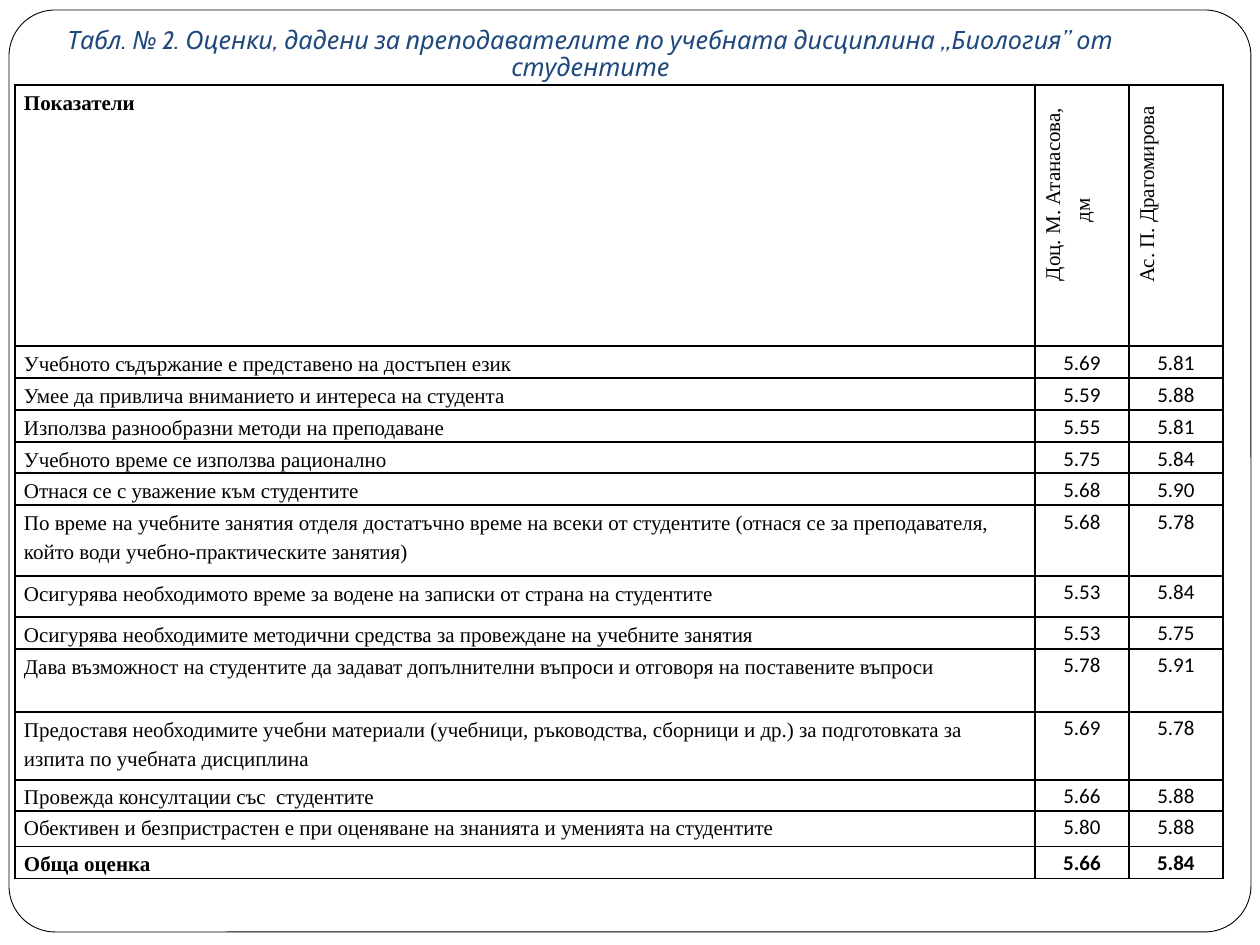
from dataclasses import dataclass

from lxml import etree
from pptx import Presentation
from pptx import util as u
from pptx.dml.color import RGBColor
from pptx.enum import shapes, text
from pptx.oxml.ns import qn


@dataclass(frozen=True)
class Theme:
    ink: str = "000000"
    paper: str = "FFFFFF"
    title: str = "1F497D"
    title_font: str = "Cabin"
    label_font: str = "Times New Roman"
    score_font: str = "Calibri"
    title_size: float = 14.4
    table_size: float = 12
    line_pitch: float = 17
    frame_line: float = 0.5
    grid_line: float = 1


THEME = Theme()
TITLE = ("Табл. № 2. Оценки, дадени за преподавателите по учебната "
         "дисциплина „Биология” от студентите")
HEADINGS = ("Показатели", "Доц. М. Атанасова, дм", "Ас. П. Драгомирова")
HEADING_HEIGHT = 261
COLUMN_WIDTHS = (1020, 94, 94)
# Row height, indicator, score of each teacher
RATINGS = [
    (32, "Учебното съдържание е представено на достъпен език", "5.69", "5.81"),
    (32, "Умее да привлича вниманието и интереса на студента", "5.59", "5.88"),
    (32, "Използва разнообразни методи на преподаване", "5.55", "5.81"),
    (31, "Учебното време се използва рационално", "5.75", "5.84"),
    (32, "Отнася се с уважение към студентите", "5.68", "5.90"),
    (71, "По време на учебните занятия отделя достатъчно време на всеки от "
         "студентите (отнася се за преподавателя, който води "
         "учебно-практическите занятия)", "5.68", "5.78"),
    (41, "Осигурява необходимото време за водене на записки от страна на "
         "студентите", "5.53", "5.84"),
    (32, "Осигурява необходимите методични средства за провеждане на "
         "учебните занятия", "5.53", "5.75"),
    (63, "Дава възможност на студентите да задават допълнителни въпроси и "
         "отговоря на поставените въпроси", "5.78", "5.91"),
    (68, "Предоставя необходимите учебни материали (учебници, ръководства, "
         "сборници и др.) за подготовката за изпита по учебната дисциплина",
     "5.69", "5.78"),
    (31, "Провежда консултации със  студентите", "5.66", "5.88"),
    (36, "Обективен и безпристрастен е при оценяване на знанията и уменията "
         "на студентите", "5.80", "5.88"),
    (32, "Обща оценка", "5.66", "5.84"),
]


def px(length):
    return u.Emu(round(length * u.Inches(1) / 126))


def color(value):
    return RGBColor.from_string(value)


def add_span(para, words, font, size, ink, bold=False, italic=False):
    span = para.add_run()
    span.text = words
    span.font.name = font
    span.font.size = u.Pt(size)
    span.font.bold = bold
    span.font.italic = italic
    span.font.color.rgb = color(ink)


def add_frame(page):
    frame = page.shapes.add_shape(shapes.MSO_SHAPE.ROUNDED_RECTANGLE,
                                  px(9), px(10), px(1242), px(922))
    frame.adjustments[0] = 0.05
    frame.shadow.inherit = False
    frame.fill.solid()
    frame.fill.fore_color.rgb = color(THEME.paper)
    frame.line.color.rgb = color(THEME.ink)
    frame.line.width = u.Pt(THEME.frame_line)


def add_title(page):
    box = page.shapes.add_textbox(px(25), px(26), px(1131), px(69)).text_frame
    box.word_wrap = True
    box.vertical_anchor = text.MSO_ANCHOR.BOTTOM
    box.margin_bottom = u.Inches(0.1)
    para = box.paragraphs[0]
    para.alignment = text.PP_ALIGN.CENTER
    para.line_spacing = 0.9
    add_span(para, TITLE, THEME.title_font, THEME.title_size, THEME.title,
             italic=True)


def outline_cell(cell):
    """Draw all four borders; they must precede the fill in the cell's XML."""
    properties = cell._tc.get_or_add_tcPr()
    for index, side in enumerate(("lnL", "lnR", "lnT", "lnB")):
        border = etree.Element(qn(f"a:{side}"),
                               w=str(u.Pt(THEME.grid_line)))
        fill = etree.SubElement(border, qn("a:solidFill"))
        etree.SubElement(fill, qn("a:srgbClr"), val=THEME.ink)
        properties.insert(index, border)


def fill_cell(cell, words, font, align, bold=False):
    cell.margin_left = cell.margin_right = px(9)
    cell.margin_top = cell.margin_bottom = 0
    cell.fill.background()
    outline_cell(cell)
    para = cell.text_frame.paragraphs[0]
    para.alignment = align
    para.line_spacing = u.Pt(THEME.line_pitch)
    add_span(para, words, font, THEME.table_size, THEME.ink, bold)


def turn_cell(cell):
    """Run the cell's text upwards, with its first line indented."""
    cell._tc.get_or_add_tcPr().set("vert", "vert270")
    properties = cell.text_frame.paragraphs[0]._p.get_or_add_pPr()
    properties.set("marL", str(px(10)))
    properties.set("indent", str(px(32)))


def add_ratings(page):
    heights = [HEADING_HEIGHT] + [rating[0] for rating in RATINGS]
    table = page.shapes.add_table(
        len(heights), len(COLUMN_WIDTHS), px(15), px(85),
        px(sum(COLUMN_WIDTHS)), px(sum(heights))).table
    table.first_row = table.horz_banding = False
    for column, width in zip(table.columns, COLUMN_WIDTHS):
        column.width = px(width)
    for row, height in zip(table.rows, heights):
        row.height = px(height)

    for index, heading in enumerate(HEADINGS):
        cell = table.cell(0, index)
        align = text.PP_ALIGN.CENTER if index else text.PP_ALIGN.JUSTIFY
        fill_cell(cell, heading, THEME.label_font, align, bold=index == 0)
        if index:
            turn_cell(cell)

    for number, (_, label, *scores) in enumerate(RATINGS, start=1):
        total = number == len(RATINGS)
        fill_cell(table.cell(number, 0), label, THEME.label_font,
                  text.PP_ALIGN.LEFT, total)
        for index, score in enumerate(scores, start=1):
            fill_cell(table.cell(number, index), score, THEME.score_font,
                      text.PP_ALIGN.CENTER, total)


def main():
    deck = Presentation()
    deck.slide_width, deck.slide_height = px(1260), px(945)
    page = deck.slides.add_slide(deck.slide_layouts[6])
    add_frame(page)
    add_title(page)
    add_ratings(page)
    deck.save("out.pptx")


if __name__ == "__main__":
    main()
